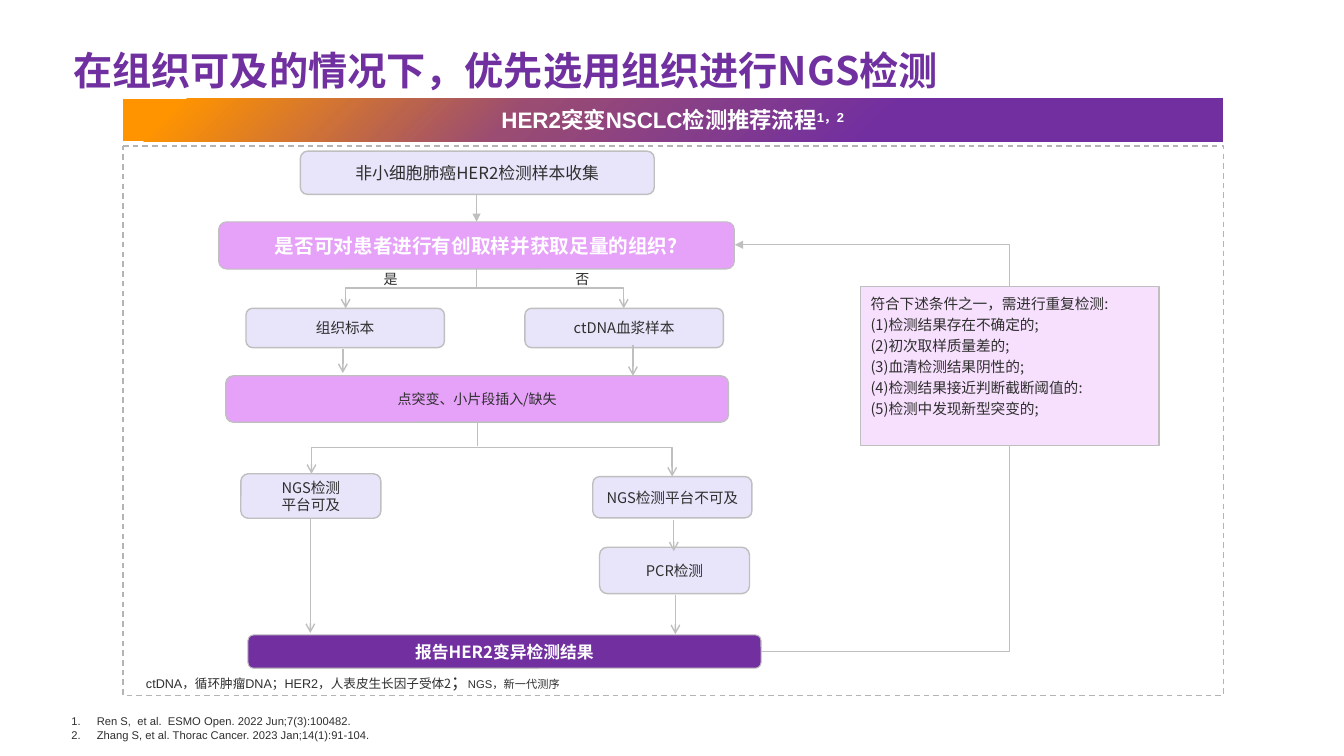
from dataclasses import dataclass

from lxml import etree
from pptx import Presentation
from pptx.dml.color import RGBColor
from pptx.enum.dml import MSO_LINE
from pptx.enum.shapes import MSO_CONNECTOR, MSO_SHAPE
from pptx.enum.text import MSO_ANCHOR, PP_ALIGN
from pptx.oxml.ns import qn
from pptx.util import Cm, Pt

ROUND, RECT = MSO_SHAPE.ROUNDED_RECTANGLE, MSO_SHAPE.RECTANGLE
STRAIGHT, ELBOW = MSO_CONNECTOR.STRAIGHT, MSO_CONNECTOR.ELBOW
MIDDLE, TOP = MSO_ANCHOR.MIDDLE, MSO_ANCHOR.TOP
CENTER, LEFT = PP_ALIGN.CENTER, PP_ALIGN.LEFT
DASH = MSO_LINE.DASH


@dataclass(frozen=True)
class Theme:
    sans: str = "Noto Sans CJK SC"
    latin: str = "Arial"
    ink: str = "2F2F2F"
    white: str = "FFFFFF"
    title: str = "70309F"
    deep: str = "712FA0"
    pink: str = "E6A1F9"
    blush: str = "F7E0FD"
    pale: str = "E8E5FA"
    edge: str = "BFBFBF"
    frame: str = "B4B4B4"
    fade: tuple = ((5, "FF9400"), (36, "9A4C72"), (69, "712FA0"))
    huge: float = 28
    head: float = 16
    ask: float = 14
    large: float = 12
    body: float = 10.5
    label: float = 10
    small: float = 9
    tiny: float = 8


class Board:
    def __init__(self, slide, theme):
        self.shapes = slide.shapes
        self.theme = theme

    def run(self, para, text, size, color=None, font=None, bold=False, lift=0):
        """Add one run; lift is the superscript offset in percent."""
        run = para.add_run()
        run.text = text
        run.font.size = Pt(size)
        run.font.bold = bold
        run.font.name = font or self.theme.sans
        run.font.color.rgb = RGBColor.from_string(color or self.theme.ink)
        props = run.font._element
        etree.SubElement(props, qn("a:ea")).set("typeface", self.theme.sans)
        if lift:
            props.set("baseline", str(lift * 1000))

    def fill(self, shape, lines, align=LEFT, anchor=TOP, space=None, pad=0.25):
        """Fill a shape with lines, each a list of run settings."""
        frame = shape.text_frame
        frame.word_wrap = True
        frame.vertical_anchor = anchor
        frame.margin_left = frame.margin_right = Cm(pad)
        for i, runs in enumerate(lines):
            para = frame.add_paragraph() if i else frame.paragraphs[0]
            para.alignment = align
            if space:
                para.line_spacing = space
            for args in runs:
                self.run(para, **args)
        return frame

    def block(self, at, fill, line=None, width=1.0, kind=ROUND, bend=None):
        shape = self.shapes.add_shape(kind, *map(Cm, at))
        shape.shadow.inherit = False
        shape.fill.solid()
        shape.fill.fore_color.rgb = RGBColor.from_string(fill)
        if line:
            shape.line.color.rgb = RGBColor.from_string(line)
            shape.line.width = Pt(width)
        else:
            shape.line.fill.background()
        if bend is not None:
            shape.adjustments[0] = bend
        return shape

    def step(self, at, lines, size, fill, color=None, bold=False, width=1.0):
        shape = self.block(at, fill, self.theme.edge, width)
        runs = [[dict(text=t, size=size, color=color, bold=bold)] for t in lines]
        self.fill(shape, runs, CENTER, MIDDLE, pad=0.1)

    def fade(self, shape, stops, angle):
        shape.fill.gradient()
        grad = shape._element.spPr.find(qn("a:gradFill"))
        grad.find(qn("a:lin")).set("ang", str(angle * 60000))
        items = grad.find(qn("a:gsLst"))
        for old in list(items):
            items.remove(old)
        for place, color in stops:
            stop = etree.SubElement(items, qn("a:gs"), pos=str(place * 1000))
            etree.SubElement(stop, qn("a:srgbClr"), val=color)

    def text(self, at, lines):
        return self.fill(self.shapes.add_textbox(*map(Cm, at)), lines)

    def link(self, start, end, tail="arrow", head=None, width=1.0, kind=STRAIGHT):
        link = self.shapes.add_connector(kind, *map(Cm, start + end))
        link.line.color.rgb = RGBColor.from_string(self.theme.edge)
        link.line.width = Pt(width)
        props = link._element.spPr
        line = props.find(qn("a:ln"))
        for tag, tip in (("a:headEnd", head), ("a:tailEnd", tail)):
            if tip:
                etree.SubElement(line, qn(tag), type=tip)
        etree.SubElement(props, qn("a:effectLst"))
        return link

    def elbow(self, start, end, mid, down=True, **style):
        """Bend at mid: a height if the link leaves downwards, else a column."""
        link = self.link(start, end, kind=ELBOW, **style)
        props = link._element.spPr
        axis = 1 if down else 0
        ratio = (mid - start[axis]) / (end[axis] - start[axis])
        guides = props.find(qn("a:prstGeom")).find(qn("a:avLst"))
        etree.SubElement(guides, qn("a:gd"), name="adj1",
                         fmla=f"val {round(ratio * 100000)}")
        if down:
            wide, high = abs(end[0] - start[0]), end[1] - start[1]
            link.left = Cm((start[0] + end[0] - high) / 2)
            link.top = Cm((start[1] + end[1] - wide) / 2)
            link.width, link.height = Cm(high), Cm(wide)
            form = props.find(qn("a:xfrm"))
            form.attrib.pop("flipH", None)
            form.set("rot", str(90 * 60000))
            form.set("flipV", "1" if end[0] > start[0] else "0")


def main():
    deck = Presentation()
    deck.slide_width, deck.slide_height = Cm(33.87), Cm(19.05)
    look = Theme()
    board = Board(deck.slides.add_slide(deck.slide_layouts[6]), look)

    # Dashed frame
    frame = board.block((3.1, 3.68, 27.74, 13.84), look.white, look.frame, bend=0)
    frame.line.dash_style = DASH

    # Flow steps
    board.step((7.57, 3.81, 8.92, 1.09), ["非小细胞肺癌HER2检测样本收集"],
               look.large, look.pale)
    board.step((5.51, 5.59, 13, 1.19), ["是否可对患者进行有创取样并获取足量的组织?"],
               look.ask, look.pink, look.white, True, 0.75)
    board.step((5.69, 9.47, 12.67, 1.17), ["点突变、小片段插入/缺失"],
               look.label, look.pink)
    for at, lines in (
        ((6.2, 7.77, 5, 0.99), ["组织标本"]),
        ((13.23, 7.77, 5, 0.99), ["ctDNA血浆样本"]),
        ((6.07, 11.94, 3.53, 1.12), ["NGS检测", "平台可及"]),
        ((14.94, 12.01, 4.01, 1.04), ["NGS检测平台不可及"]),
        ((15.11, 13.79, 3.78, 1.17), ["PCR检测"]),
    ):
        board.step(at, lines, look.body, look.pale)
    board.step((6.25, 16, 12.93, 0.84), ["报告HER2变异检测结果"],
               look.large, look.deep, look.white, True, 0.75)

    # Retest loop and its conditions
    board.elbow((19.18, 16.41), (18.52, 6.17), 25.43, down=False,
                tail="triangle", width=0.5)
    note = board.block((21.69, 7.21, 7.52, 4.01), look.blush, look.edge, 0.75, RECT)
    rules = ("符合下述条件之一，需进行重复检测:", "(1)检测结果存在不确定的;",
             "(2)初次取样质量差的;", "(3)血清检测结果阴性的;",
             "(4)检测结果接近判断截断阈值的:", "(5)检测中发现新型突变的;")
    board.fill(note, [[dict(text=t, size=look.body)] for t in rules], space=1.2)

    # Banner
    banner = board.block((3.1, 2.49, 27.71, 1.07), look.deep, bend=0)
    board.fade(banner, look.fade, 45)
    bright = dict(size=look.head, color=look.white, font=look.latin, bold=True)
    board.fill(banner, [[dict(text="HER2突变NSCLC检测推荐流程", **bright),
                         dict(text="1，2", lift=30, **bright)]], CENTER, MIDDLE)

    # Straight links
    board.link((12.01, 4.9), (12.01, 5.59), "triangle", width=0.5)
    board.link((12.04, 10.62), (12.04, 11.25), None)
    for x, top, end in ((8.64, 8.8, 9.4), (15.95, 8.69, 9.47), (16.98, 13.11, 13.89),
                        (7.82, 13.06, 15.95), (17.02, 14.99, 15.98)):
        board.link((x, top), (x, end))

    # Forks
    for x in (15.72, 8.71):
        board.elbow((12.01, 6.76), (x, 7.77), 7.26)
    board.elbow((7.85, 11.94), (16.94, 12.01), 11.28, head="arrow")

    # Branch labels
    for x, word in ((9.42, "是"), (14.25, "否")):
        board.text((x, 6.69, 1.19, 0.69),
                   [[dict(text=word, size=look.label, font=look.latin)]])

    # Title
    board.text((1.6, 1.04, 30.18, 1.55),
               [[dict(text="在组织可及的情况下，优先选用组织进行NGS检测",
                      size=look.huge, color=look.title, bold=True)]])

    # Abbreviations
    board.text((3.43, 16.81, 15.11, 0.76), [[
        dict(text="ctDNA，循环肿瘤DNA；HER2，人表皮生长因子受体",
             size=look.small, font=look.latin),
        dict(text="2", size=look.small),
        dict(text="；", size=look.large, font=look.latin),
        dict(text="NGS，新一代测序", size=look.tiny, font=look.latin)]])

    # Numbered references
    cites = ("Ren S,  et al.  ESMO Open. 2022 Jun;7(3):100482.",
             "Zhang S, et al. Thorac Cancer. 2023 Jan;14(1):91-104.")
    refs = board.text((1.55, 17.88, 29.54, 0.94),
                      [[dict(text=t, size=look.tiny, font=look.latin)] for t in cites])
    for para in refs.paragraphs:
        props = para._p.get_or_add_pPr()
        props.set("marL", str(Cm(0.64)))
        props.set("indent", str(-Cm(0.64)))
        etree.SubElement(props, qn("a:buAutoNum"), type="arabicPeriod")

    deck.save("out.pptx")


if __name__ == "__main__":
    main()
